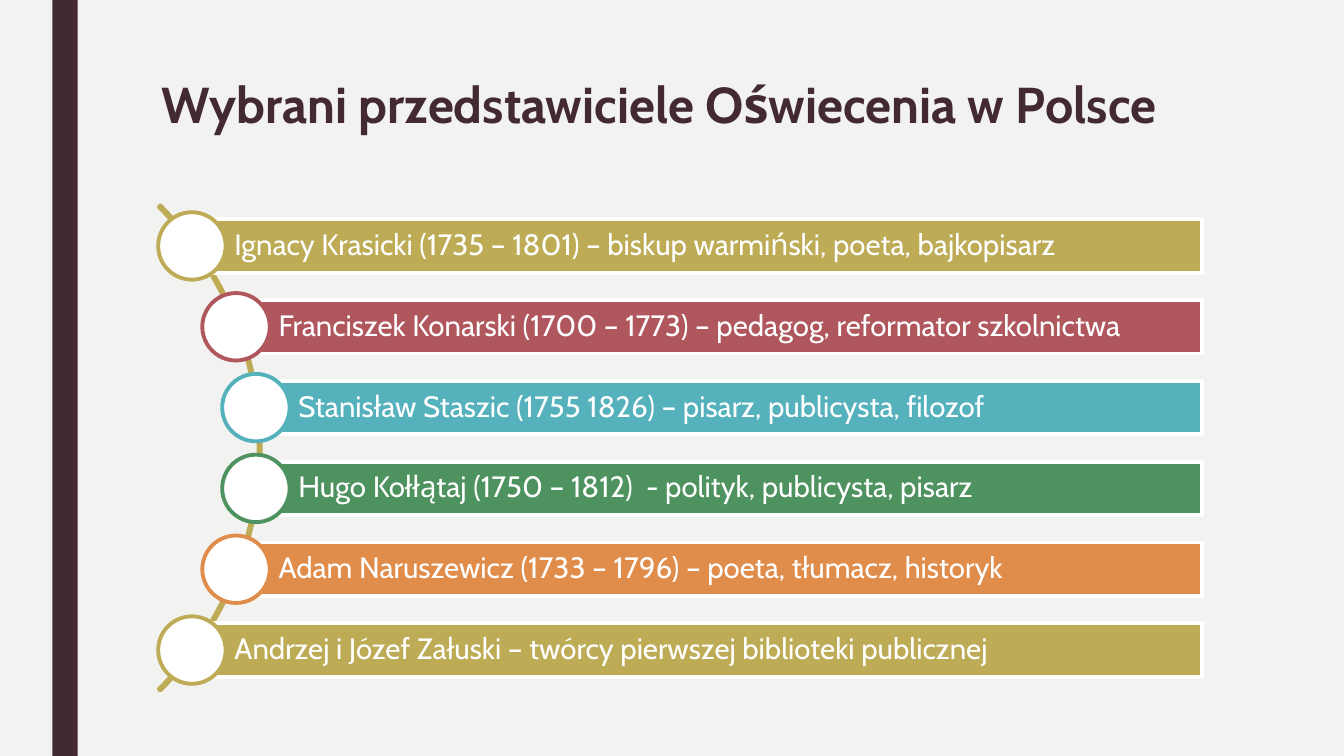
import math

import pptx
import pptx.dml.color
import pptx.enum.shapes
import pptx.enum.text
import pptx.util

Cm = pptx.util.Cm
Pt = pptx.util.Pt
RGBColor = pptx.dml.color.RGBColor
Shape = pptx.enum.shapes.MSO_SHAPE
Anchor = pptx.enum.text.MSO_ANCHOR

PAPER = RGBColor(0xF2, 0xF2, 0xF0)
PLUM = RGBColor(0x43, 0x2A, 0x30)
WHITE = RGBColor(0xFF, 0xFF, 0xFF)
OLIVE = RGBColor(0xBD, 0xAB, 0x56)
RED = RGBColor(0xB0, 0x56, 0x5D)
TEAL = RGBColor(0x55, 0xB1, 0xBC)
GREEN = RGBColor(0x4D, 0x92, 0x5F)
ORANGE = RGBColor(0xE0, 0x8C, 0x4A)

FONT = "Cabin"
OUTLINE = Pt(2.75)

PEOPLE = [
    ("Ignacy Krasicki (1735 – 1801) – biskup warmiński, poeta, bajkopisarz", OLIVE),
    ("Franciszek Konarski (1700 – 1773) – pedagog, reformator szkolnictwa", RED),
    ("Stanisław Staszic (1755 1826) – pisarz, publicysta, filozof", TEAL),
    ("Hugo Kołłątaj (1750 – 1812)  - polityk, publicysta, pisarz", GREEN),
    ("Adam Naruszewicz (1733 – 1796) – poeta, tłumacz, historyk", ORANGE),
    ("Andrzej i Józef Załuski – twórcy pierwszej biblioteki publicznej", OLIVE),
]


def add_shape(slide, kind, left, top, width, height, fill=None, line=None):
    shape = slide.shapes.add_shape(kind, left, top, width, height)
    shape.shadow.inherit = False
    if fill is None:
        shape.fill.background()
    else:
        shape.fill.solid()
        shape.fill.fore_color.rgb = fill
    if line is None:
        shape.line.fill.background()
    else:
        shape.line.color.rgb = line
        shape.line.width = OUTLINE
    return shape


def write_line(text_frame, text, size, color, spacing, bold=False):
    text_frame.word_wrap = True
    text_frame.auto_size = pptx.enum.text.MSO_AUTO_SIZE.NONE
    paragraph = text_frame.paragraphs[0]
    paragraph.alignment = pptx.enum.text.PP_ALIGN.LEFT
    paragraph.line_spacing = spacing
    run = paragraph.add_run()
    run.text = text
    run.font.name = FONT
    run.font.size = Pt(size)
    run.font.bold = bold
    run.font.color.rgb = color


def place_title(slide, left, top, width, height):
    title = slide.shapes.title
    title.left, title.top, title.width, title.height = left, top, width, height
    title.text_frame.vertical_anchor = Anchor.TOP
    write_line(title.text_frame, "Wybrani przedstawiciele Oświecenia w Polsce",
               36, PLUM, 0.89, bold=True)


def add_person(slide, center_x, center_y, right, text, color):
    bar_height, dot_size = Cm(1.35), Cm(1.7)

    # Bar with the name, starting at the centre of the dot
    bar = add_shape(slide, Shape.RECTANGLE, center_x, center_y - bar_height // 2,
                    right - center_x, bar_height, color, WHITE)
    frame = bar.text_frame
    frame.vertical_anchor = Anchor.MIDDLE
    frame.margin_left = Cm(1.07)
    frame.margin_top = frame.margin_right = frame.margin_bottom = Cm(0.15)
    write_line(frame, text, 21, WHITE, 0.9)

    # Dot
    add_shape(slide, Shape.OVAL, center_x - dot_size // 2, center_y - dot_size // 2,
              dot_size, dot_size, WHITE, color)


def add_curved_list(slide, left, top, width, height):
    """Bars along an arc whose ends touch the left corners of the box."""
    radius = height / math.sqrt(2)
    arc_x = left - height / 2
    arc_y = top + height / 2

    # Quarter arc from -45 to 45 degrees
    arc = add_shape(slide, Shape.BLOCK_ARC, int(arc_x - radius), int(arc_y - radius),
                    int(2 * radius), int(2 * radius), line=OLIVE)
    arc.adjustments[0] = 189
    arc.adjustments[1] = 27
    arc.adjustments[2] = 0.003

    # Evenly spaced people, centred on the arc
    step = height / len(PEOPLE)
    dot_radius = radius - Cm(0.06)
    for index, (text, color) in enumerate(PEOPLE):
        offset = (index - (len(PEOPLE) - 1) / 2) * step
        center_x = arc_x + math.sqrt(dot_radius ** 2 - offset ** 2)
        add_person(slide, int(center_x), int(arc_y + offset), left + width, text, color)


def build_slide(presentation):
    slide = presentation.slides.add_slide(presentation.slide_layouts[5])
    slide.background.fill.solid()
    slide.background.fill.fore_color.rgb = PAPER

    # Side band
    add_shape(slide, Shape.RECTANGLE, Cm(1.32), 0, Cm(0.64),
              presentation.slide_height, PLUM)
    place_title(slide, Cm(3.81), Cm(1.9), Cm(26.67), Cm(2.24))
    add_curved_list(slide, Cm(4.04), Cm(5.18), Cm(26.26), Cm(12.22))


def main():
    presentation = pptx.Presentation()
    presentation.slide_width = Cm(33.87)
    presentation.slide_height = Cm(19.05)
    build_slide(presentation)
    presentation.save("out.pptx")


if __name__ == "__main__":
    main()
